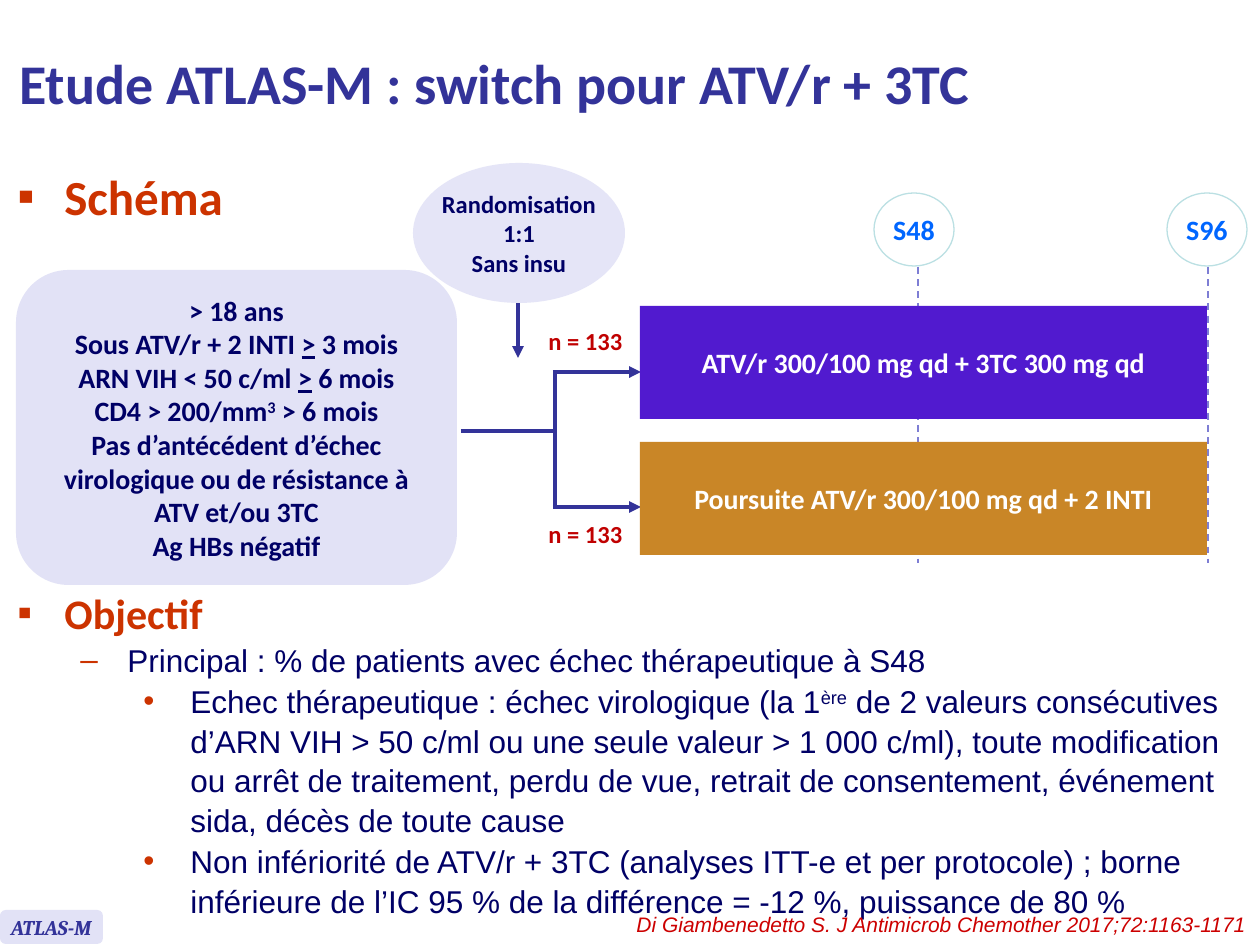
from lxml.etree import SubElement
from pptx import Presentation
from pptx.dml.color import RGBColor
from pptx.enum.dml import MSO_LINE
from pptx.enum.shapes import MSO_CONNECTOR, MSO_SHAPE
from pptx.enum.text import MSO_ANCHOR, PP_ALIGN
from pptx.oxml.ns import qn
from pptx.util import Emu, Pt

WHITE = RGBColor(0xFF, 0xFF, 0xFF)
INDIGO = RGBColor(0x33, 0x33, 0x99)
NAVY = RGBColor(0x00, 0x00, 0x66)
RUST = RGBColor(0xCC, 0x33, 0x00)
RED = RGBColor(0xC0, 0x00, 0x00)
CITE = RGBColor(0xCC, 0x00, 0x00)
BLUE = RGBColor(0x00, 0x66, 0xFF)
PURPLE = RGBColor(0x51, 0x1A, 0xCF)
OCHRE = RGBColor(0xC9, 0x86, 0x27)
LILAC = RGBColor(0xE2, 0xE2, 0xF6)
MAUVE = RGBColor(0xE5, 0xE5, 0xF7)
DASH = RGBColor(0x7E, 0x7E, 0xD4)
TEAL = RGBColor(0xBB, 0xE0, 0xE3)

CRITERIA = [
    "> 18 ans",
    "Sous ATV/r + 2 INTI |>| 3 mois",
    "ARN VIH < 50 c/ml |>| 6 mois",
    "CD4 > 200/mm|3| > 6 mois",
    "Pas d’antécédent d’échec virologique ou de résistance à ATV et/ou 3TC",
    "Ag HBs négatif",
]
GOALS = [
    (1, "Principal : % de patients avec échec thérapeutique à S48"),
    (2, "Echec thérapeutique : échec virologique (la 1|ère| de 2 valeurs "
        "consécutives d’ARN VIH > 50 c/ml ou une seule valeur > 1 000 c/ml), "
        "toute modification ou arrêt de traitement, perdu de vue, retrait de "
        "consentement, événement sida, décès de toute cause"),
    (2, "Non infériorité de ATV/r + 3TC (analyses ITT-e et per protocole) ; "
        "borne inférieure de l’IC 95 % de la différence = -12 %, "
        "puissance de 80 %"),
]


def px(n):
    return Emu(round(n * 914400 / 126))


def write(para, text, size, color, face="Calibri", bold=True, italic=False,
          align=None):
    """Fill a paragraph; a part between bars is underlined (>) or raised."""
    para.alignment = align
    for i, part in enumerate(text.split("|")):
        run = para.add_run()
        run.text = part
        font = run.font
        font.name, font.size, font.bold, font.italic = face, Pt(size), bold, italic
        font.color.rgb = color
        if i % 2 and part == ">":
            font.underline = True
        elif i % 2:
            font._element.set("baseline", "30000")


def fill(frame, lines, size, color, align=PP_ALIGN.CENTER, **style):
    for i, text in enumerate(lines):
        para = frame.add_paragraph() if i else frame.paragraphs[0]
        write(para, text, size, color, align=align, **style)


def label(slide, x, y, w, h, wrap=True):
    frame = slide.shapes.add_textbox(px(x), px(y), px(w), px(h)).text_frame
    frame.word_wrap = wrap
    return frame


def block(slide, kind, x, y, w, h, back, edge=None, wrap=True):
    shape = slide.shapes.add_shape(kind, px(x), px(y), px(w), px(h))
    shape.shadow.inherit = False
    shape.fill.solid()
    shape.fill.fore_color.rgb = back
    if edge:
        shape.line.color.rgb = edge
        shape.line.width = Pt(0.75)
    else:
        shape.line.fill.background()
    frame = shape.text_frame
    frame.word_wrap = wrap
    frame.vertical_anchor = MSO_ANCHOR.MIDDLE
    return frame


def link(slide, x1, y1, x2, y2, color=INDIGO, width=2.25, arrow=False):
    line = slide.shapes.add_connector(
        MSO_CONNECTOR.STRAIGHT, px(x1), px(y1), px(x2), px(y2))
    line.line.color.rgb = color
    line.line.width = Pt(width)
    if arrow:
        SubElement(line.line._get_or_add_ln(), qn("a:tailEnd"), type="triangle")
    SubElement(line._element.spPr, qn("a:effectLst"))
    return line


def bullet(para, char, face, level=0):
    para.level = level
    props = para._p.get_or_add_pPr()
    props.set("marL", str(px(47 + 63 * level)))
    props.set("indent", str(-px(47)))
    tint = SubElement(props, qn("a:buClr"))
    SubElement(tint, qn("a:srgbClr"), val=str(RUST))
    SubElement(props, qn("a:buFont"), typeface=face)
    SubElement(props, qn("a:buChar"), char=char)


def heading(frame, text, size):
    para = frame.paragraphs[0]
    bullet(para, "▪", "Arial")
    write(para, text, size, RUST)


def title(slide, x, y, w, h):
    frame = label(slide, x, y, w, h)
    frame.vertical_anchor = MSO_ANCHOR.MIDDLE
    fill(frame, ["Etude ATLAS-M : switch pour ATV/r + 3TC"], 32, INDIGO,
         align=PP_ALIGN.LEFT)


def visit(slide, x, y, name, axis):
    """Week marker above its dashed line."""
    line = link(slide, axis, y + 74, axis, y + 370, DASH, 1)
    line.line.dash_style = MSO_LINE.DASH
    frame = block(slide, MSO_SHAPE.OVAL, x, y, 80, 73, WHITE, TEAL, wrap=False)
    fill(frame, [name], 16, BLUE)


def arm(slide, x, y, text, color, count):
    """Treatment bar with its group size, count px below the bar's top."""
    frame = block(slide, MSO_SHAPE.RECTANGLE, x, y, 567, 113, color)
    fill(frame, [text], 16, WHITE)
    frame = label(slide, x - 106, y + count, 103, 43, wrap=False)
    fill(frame, ["n = 133"], 14, RED)


def scheme(slide, x, y):
    heading(label(slide, x, y, 249, 79), "Schéma", 28)
    visit(slide, x + 869, y + 33, "S48", x + 913)
    visit(slide, x + 1162, y + 33, "S96", x + 1203)

    fork, upper, lower = x + 550, y + 212, y + 347
    link(slide, x + 456, y + 271, fork, y + 271)
    link(slide, fork, upper, fork, lower)
    for level in (upper, lower):
        link(slide, fork - 2, level, x + 636, level, arrow=True)
    arm(slide, x + 635, y + 146, "ATV/r 300/100 mg qd + 3TC 300 mg qd",
        PURPLE, 14)
    arm(slide, x + 635, y + 282, "Poursuite ATV/r 300/100 mg qd + 2 INTI",
        OCHRE, 71)

    link(slide, x + 513, y + 142, x + 513, y + 198, arrow=True)
    frame = block(slide, MSO_SHAPE.OVAL, x + 408, y + 3, 212, 140, MAUVE,
                  wrap=False)
    fill(frame, ["Randomisation", "1:1", "Sans insu"], 14, NAVY)
    frame = block(slide, MSO_SHAPE.ROUNDED_RECTANGLE, x + 11, y + 110,
                  441, 315, LILAC)
    fill(frame, CRITERIA, 16, NAVY)


def goals(slide, x, y, w, h):
    frame = label(slide, x, y, w, h)
    heading(frame, "Objectif", 24)
    for level, text in GOALS:
        para = frame.add_paragraph()
        bullet(para, "–" if level == 1 else "•", "Arial", level)
        para.space_before = Pt(0.8)
        para.line_spacing = 1.05
        write(para, text, 18, NAVY, face="Arial", bold=False)


def footer(slide, x, y, w):
    frame = block(slide, MSO_SHAPE.ROUNDED_RECTANGLE, x, y, 103, 34, LILAC,
                  wrap=False)
    fill(frame, ["ATLAS-M"], 12, INDIGO, face="Cambria", italic=True)
    frame = label(slide, x + w - 706, y - 5, 706, 38)
    fill(frame, ["Di Giambenedetto S. J Antimicrob Chemother 2017;72:1163-1171"],
         12, CITE, align=PP_ALIGN.RIGHT, face="Arial", bold=False, italic=True)


def main():
    deck = Presentation()
    deck.slide_width, deck.slide_height = px(1260), px(945)
    slide = deck.slides.add_slide(deck.slide_layouts[6])
    scheme(slide, 5, 160)
    goals(slide, 5, 581, 1241, 333)
    title(slide, 7, 6, 1129, 153)
    footer(slide, 0, 910, 1259)
    deck.save("out.pptx")


if __name__ == "__main__":
    main()
